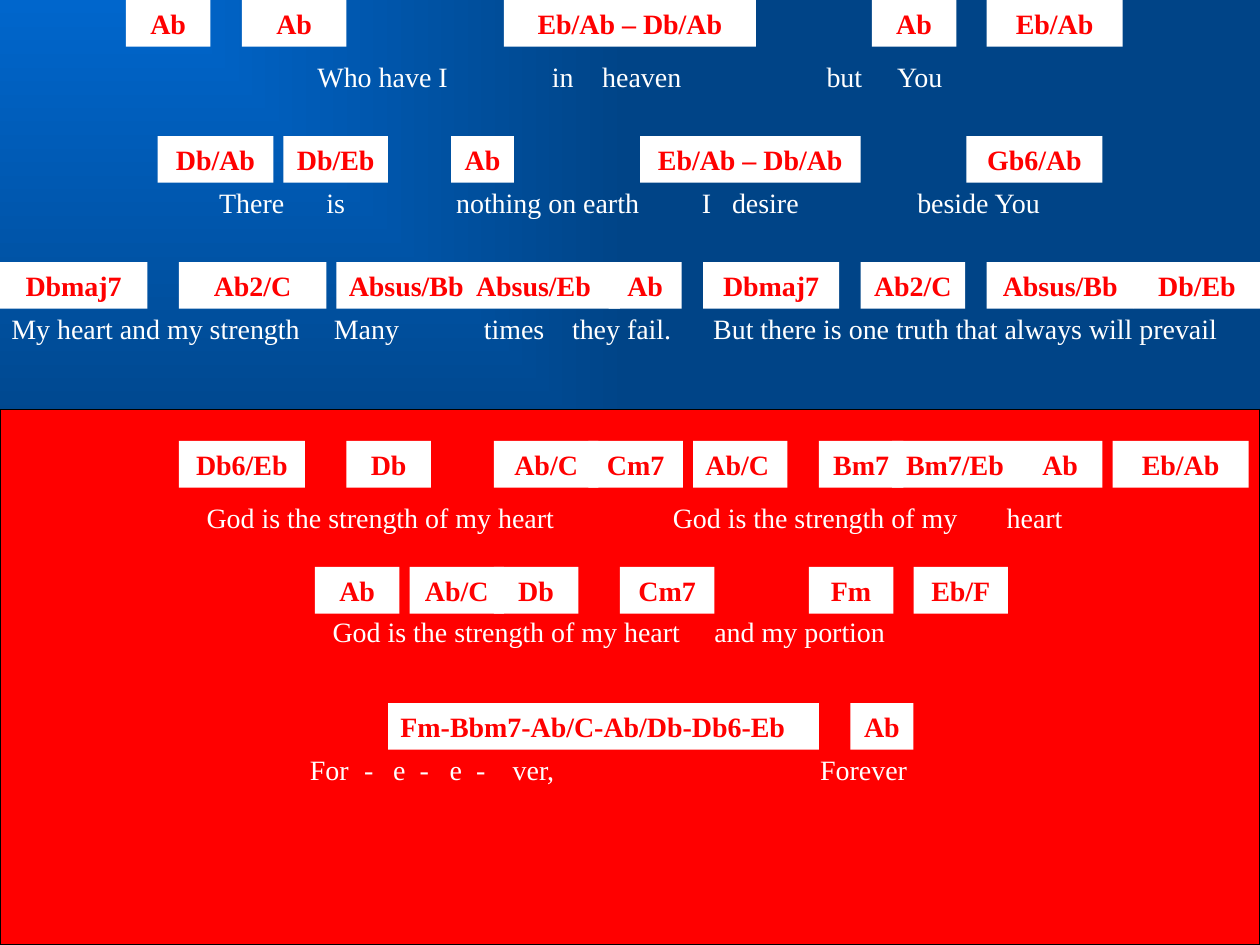
"""Build a song slide with chord labels set above the lyric lines."""
from lxml import etree
from pptx import Presentation
from pptx.dml.color import RGBColor
from pptx.enum.shapes import MSO_SHAPE
from pptx.enum.text import MSO_ANCHOR, MSO_AUTO_SIZE, PP_ALIGN
from pptx.oxml.ns import qn
from pptx.util import Inches, Pt

RECTANGLE = MSO_SHAPE.RECTANGLE
TOP = MSO_ANCHOR.TOP
GROW = MSO_AUTO_SIZE.SHAPE_TO_FIT_TEXT
LEFT, CENTER = PP_ALIGN.LEFT, PP_ALIGN.CENTER

COLORS = {
    "glow": "0066CC",
    "deep": "004487",
    "chorus": "FF0000",
    "border": "000000",
    "label": "FFFFFF",
    "chord": "FF0000",
    "lyric": "FFFFFF",
}
FONT, SIZE = "Times New Roman", 16
LINE_HEIGHT, INSET = 0.37, 0.1

# Chords are (left, width, text); phrases are (left, text).
SONG = [
    {"top": 0, "lyric_top": 0.42, "span": (0, 10),
     "chords": [(1, 0.67, "Ab"), (1.92, 0.83, "Ab"), (4, 2, "Eb/Ab – Db/Ab"),
                (6.92, 0.67, "Ab"), (7.83, 1.08, "Eb/Ab")],
     "phrases": [(2.52, "Who have I"), (4.38, "in"), (4.78, "heaven"),
                 (6.56, "but"), (7.12, "You")]},
    {"top": 1.08, "lyric_top": 1.42, "span": (0, 10),
     "chords": [(1.25, 0.92, "Db/Ab"), (2.25, 0.83, "Db/Eb"), (3.58, 0.5, "Ab"),
                (5.08, 1.75, "Eb/Ab – Db/Ab"), (7.67, 1.08, "Gb6/Ab")],
     "phrases": [(1.74, "There"), (2.59, "is"), (3.62, "nothing on earth"),
                 (5.57, "I"), (5.81, "desire"), (7.28, "beside You")]},
    {"top": 2.08, "lyric_top": 2.42, "span": (-0.25, 10.25),
     "chords": [(0, 1.17, "Dbmaj7"), (1.42, 1.17, "Ab2/C"),
                (2.67, 2.25, "Absus/Bb\tAbsus/Eb"), (4.83, 0.58, "Ab"),
                (5.58, 1.08, "Dbmaj7"), (6.83, 0.83, "Ab2/C"),
                (7.83, 1.17, "Absus/Bb"), (9, 1, "Db/Eb")],
     "phrases": [(0.09, "My heart and my strength"), (2.65, "Many"),
                 (3.84, "times"), (4.54, "they fail."),
                 (5.66, "But there is one truth that always will prevail")]},
    {"top": 3.5, "lyric_top": 3.92, "span": (0.58, 8.92),
     "chords": [(1.42, 1, "Db6/Eb"), (2.75, 0.67, "Db"), (3.92, 0.83, "Ab/C"),
                (4.67, 0.75, "Cm7"), (5.5, 0.75, "Ab/C"), (6.5, 0.67, "Bm7"),
                (7.08, 1, "Bm7/Eb"), (8.08, 0.67, "Ab"), (8.83, 1.08, "Eb/Ab")],
     "phrases": [(1.64, "God is the strength of my heart"),
                 (5.34, "God is the strength of my"), (7.99, "heart")]},
    {"top": 4.5, "lyric_top": 4.83, "span": (0, 10),
     "chords": [(2.5, 0.67, "Ab"), (3.25, 0.75, "Ab/C"), (3.92, 0.67, "Db"),
                (4.92, 0.75, "Cm7"), (6.42, 0.67, "Fm"), (7.25, 0.75, "Eb/F")],
     "phrases": [(2.64, "God is the strength of my heart"),
                 (5.67, "and my portion")]},
    {"top": 5.58, "lyric_top": 5.92, "span": (0, 10),
     "chords": [(3.08, 3.42, "Fm-Bbm7-Ab/C-Ab/Db-Db6-Eb"), (6.75, 0.5, "Ab")],
     "phrases": [(2.46, "For"), (2.89, "-"), (3.12, "e"), (3.33, "-"),
                 (3.57, "e"), (3.78, "-"), (4.07, "ver,"), (6.51, "Forever")]},
]
LEFT_ALIGNED = {(2.67, 2.08), (5.5, 3.5), (3.08, 5.58)}
CHORD_TAB = 1.01


def rgb(role):
    return RGBColor.from_string(COLORS[role])


def paint_background(slide):
    fill = slide.background.fill
    fill.gradient()
    for stop, role in zip(fill.gradient_stops, ("glow", "deep")):
        stop.color.rgb = rgb(role)
    linear = slide.element.find(".//" + qn("a:lin"))
    radial = etree.Element(qn("a:path"), path="rect")
    etree.SubElement(radial, qn("a:fillToRect"), r="100000", b="100000")
    linear.getparent().replace(linear, radial)


def add_block(slide, left, top, width, height, role):
    block = slide.shapes.add_shape(
        RECTANGLE, Inches(left), Inches(top), Inches(width), Inches(height))
    block.shadow.inherit = False
    block.fill.solid()
    block.fill.fore_color.rgb = rgb(role)
    block.line.fill.background()
    return block


def write_line(frame, text, role, align, bold=False, stops=()):
    frame.word_wrap = True
    frame.auto_size = GROW
    frame.vertical_anchor = TOP
    line = frame.paragraphs[0]
    line.text = text
    line.alignment = align
    line.font.name, line.font.size, line.font.bold = FONT, Pt(SIZE), bold
    line.font.color.rgb = rgb(role)
    for run in line.runs:
        run.font.name, run.font.size, run.font.bold = FONT, Pt(SIZE), bold
        run.font.color.rgb = rgb(role)
    if stops:
        tabs = etree.Element(qn("a:tabLst"))
        for stop in stops:
            etree.SubElement(tabs, qn("a:tab"), pos=str(Inches(stop)), algn="l")
        line.font._element.addprevious(tabs)


def add_lyric(slide, verse):
    left, width = verse["span"]
    start = verse["phrases"][0][0]
    lyric = slide.shapes.add_textbox(
        Inches(left), Inches(verse["lyric_top"]), Inches(width), Inches(LINE_HEIGHT))
    lyric.text_frame.margin_left = Inches(start - left)
    lyric.text_frame.margin_right = 0
    write_line(lyric.text_frame, "\t".join(text for _, text in verse["phrases"]),
               "lyric", LEFT, stops=[x - start for x, _ in verse["phrases"][1:]])


def add_chord(slide, left, top, width, text):
    label = add_block(slide, left, top, width, LINE_HEIGHT, "label")
    label.text_frame.margin_left = label.text_frame.margin_right = Inches(INSET)
    align = LEFT if (left, top) in LEFT_ALIGNED else CENTER
    write_line(label.text_frame, text, "chord", align, bold=True,
               stops=[CHORD_TAB] if "\t" in text else ())


def main():
    deck = Presentation()
    deck.slide_width, deck.slide_height = Inches(10), Inches(7.5)
    slide = deck.slides.add_slide(deck.slide_layouts[6])
    paint_background(slide)
    chorus = add_block(slide, 0, 3.25, 10, 4.25, "chorus")
    chorus.line.color.rgb = rgb("border")
    chorus.line.width = Pt(0.75)
    for verse in SONG:
        add_lyric(slide, verse)
        for left, width, text in verse["chords"]:
            add_chord(slide, left, verse["top"], width, text)
    deck.save("out.pptx")


if __name__ == "__main__":
    main()
